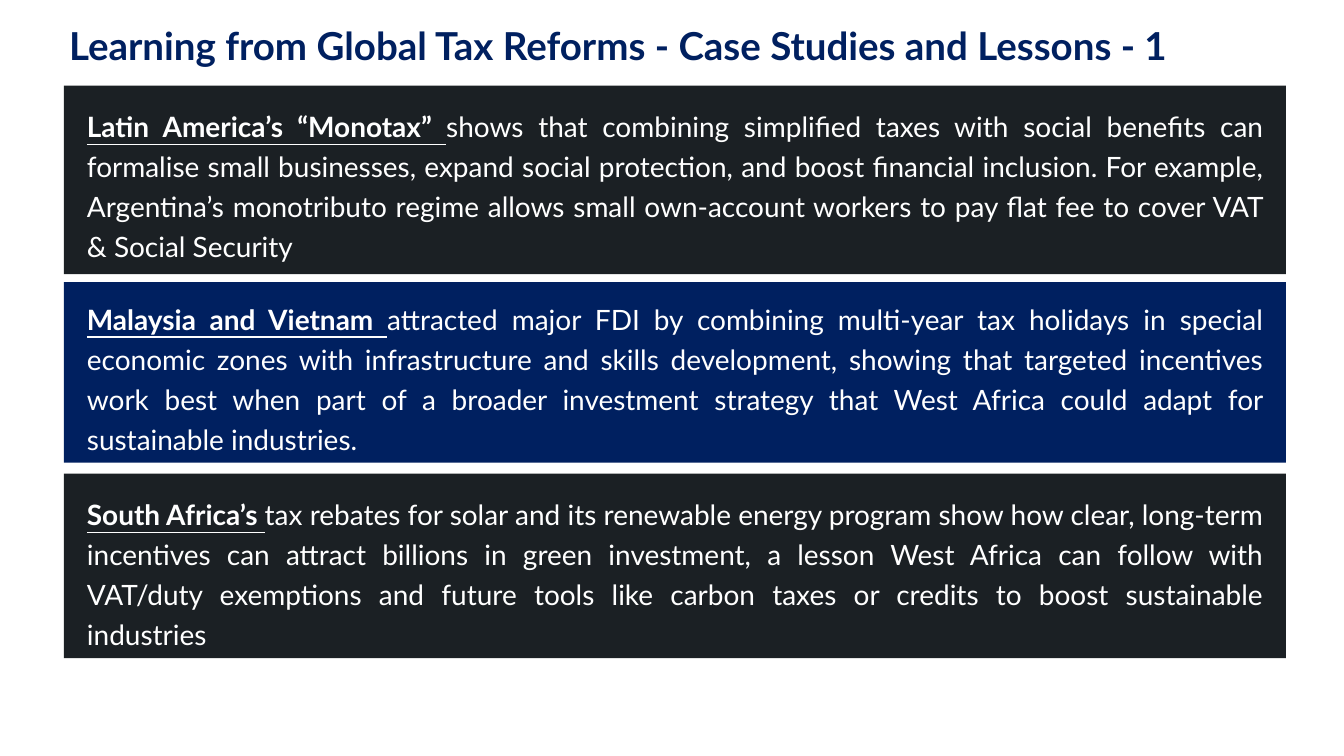
from pptx import Presentation
from pptx.dml.color import RGBColor
from pptx.enum.shapes import MSO_SHAPE
from pptx.enum.text import MSO_ANCHOR, MSO_AUTO_SIZE, PP_ALIGN
from pptx.util import Pt

COLORS = {"navy": "002060", "charcoal": "1B2024", "white": "FFFFFF"}
FONT = "Lato"
TITLE_FORMAT = {"name": FONT, "size": Pt(55), "bold": True}
LEAD_FORMAT = {"name": FONT, "size": Pt(40), "bold": True, "underline": True}
BODY_FORMAT = {"name": FONT, "size": Pt(40), "bold": False, "underline": False}

PANEL_LEFT, PANEL_WIDTH = 91.2, 1745.3
TEXT_INSET, TEXT_HEIGHT = 25.9, 234

# Panel top, panel height, gap above the text, fill, lead words, body
CASES = [
    (122.4, 269.3, 20.2, "charcoal", "Latin America’s “Monotax” ",
     "shows that combining simplified taxes with social benefits can formalise "
     "small businesses, expand social protection, and boost financial inclusion. "
     "For example, Argentina’s monotributo regime allows small own-account "
     "workers to pay flat fee to cover VAT & Social Security"),
    (403.2, 257.8, 15.1, "navy", "Malaysia and Vietnam ",
     "attracted major FDI by combining multi-year tax holidays in special "
     "economic zones with infrastructure and skills development, showing that "
     "targeted incentives work best when part of a broader investment strategy "
     "that West Africa could adapt for sustainable industries."),
    (676.8, 263.5, 20.2, "charcoal", "South Africa’s ",
     "tax rebates for solar and its renewable energy program show how clear, "
     "long-term incentives can attract billions in green investment, a lesson "
     "West Africa can follow with VAT/duty exemptions and future tools like "
     "carbon taxes or credits to boost sustainable industries"),
]


def add_span(para, text, font_format, color):
    span = para.add_run()
    span.text = text
    for name, value in font_format.items():
        setattr(span.font, name, value)
    span.font.color.rgb = RGBColor.from_string(COLORS[color])


def place_title(page, left, top, width, height, text):
    title = page.shapes.title
    title.left, title.top, title.width, title.height = map(
        Pt, (left, top, width, height))
    frame = title.text_frame
    frame.word_wrap = False
    frame.auto_size = MSO_AUTO_SIZE.NONE
    frame.vertical_anchor = MSO_ANCHOR.TOP
    para = frame.paragraphs[0]
    para.alignment = PP_ALIGN.LEFT
    add_span(para, text, TITLE_FORMAT, "navy")


def add_case(page, left, top, width, height, text_gap, fill, lead, body):
    """Draw a filled panel with a justified paragraph on top of it."""
    panel = page.shapes.add_shape(
        MSO_SHAPE.RECTANGLE, Pt(left), Pt(top), Pt(width), Pt(height))
    panel.shadow.inherit = False
    panel.fill.solid()
    panel.fill.fore_color.rgb = RGBColor.from_string(COLORS[fill])
    panel.line.fill.background()

    box = page.shapes.add_textbox(
        Pt(left + TEXT_INSET), Pt(top + text_gap),
        Pt(width - 2 * TEXT_INSET + 0.7), Pt(TEXT_HEIGHT))
    box.text_frame.word_wrap = True
    para = box.text_frame.paragraphs[0]
    para.alignment = PP_ALIGN.JUSTIFY
    para.line_spacing = 1.2
    add_span(para, lead, LEAD_FORMAT, "white")
    add_span(para, body, BODY_FORMAT, "white")


def main():
    deck = Presentation()
    deck.slide_width, deck.slide_height = Pt(1919.5), Pt(1080)
    page = deck.slides.add_slide(deck.slide_layouts[5])
    place_title(page, 91.4, 28.1, 1629.4, 74.2,
                "Learning from Global Tax Reforms - Case Studies and Lessons - 1")
    for top, height, text_gap, fill, lead, body in CASES:
        add_case(page, PANEL_LEFT, top, PANEL_WIDTH, height,
                 text_gap, fill, lead, body)
    deck.save("out.pptx")


if __name__ == "__main__":
    main()
